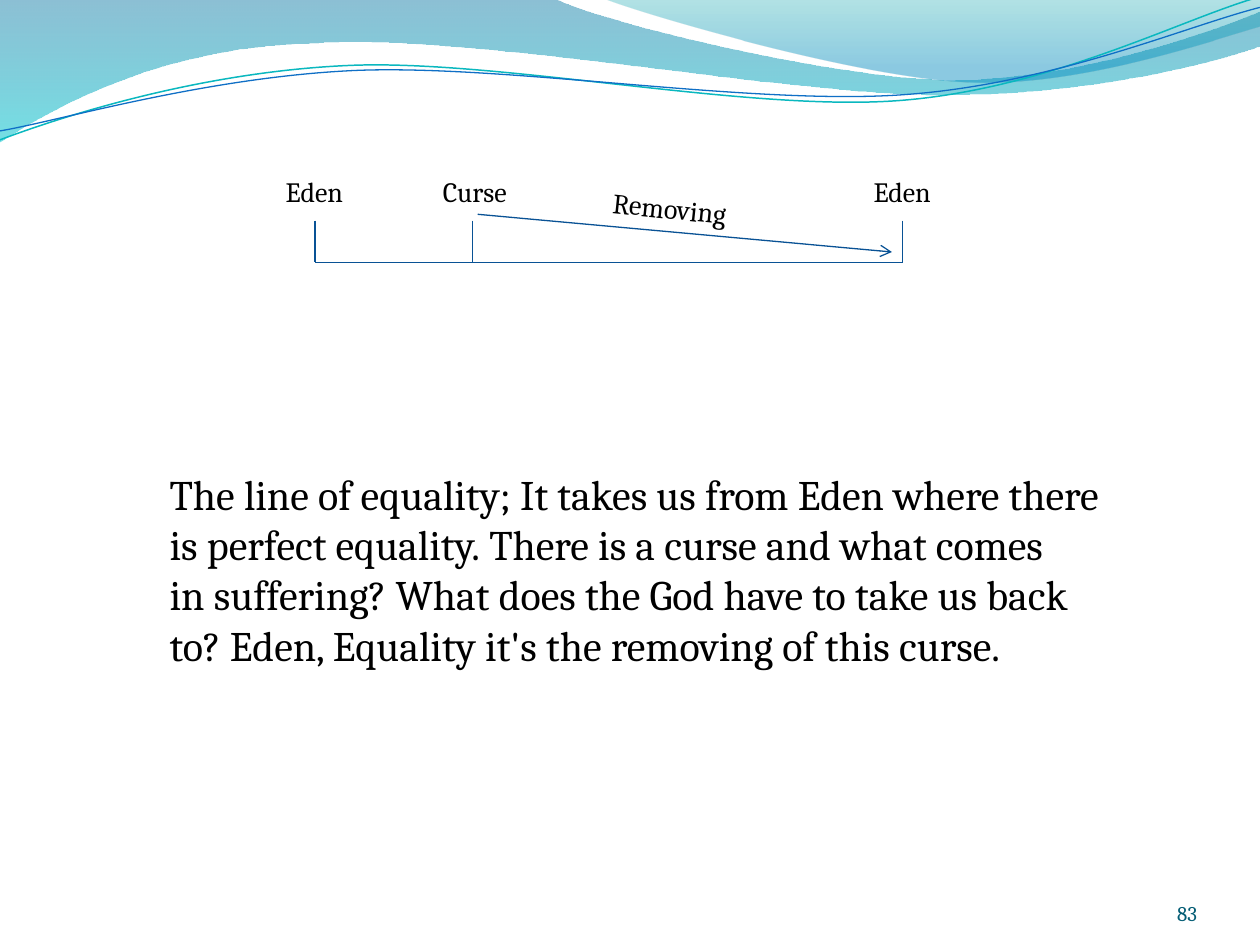
import pptx
import pptx.util
import pptx.dml.color
import pptx.enum.shapes
import pptx.enum.text
import pptx.oxml.ns
import lxml.etree

Cm = pptx.util.Cm
Pt = pptx.util.Pt
RGBColor = pptx.dml.color.RGBColor
Anchor = pptx.enum.text.MSO_ANCHOR
Align = pptx.enum.text.PP_ALIGN
AutoSize = pptx.enum.text.MSO_AUTO_SIZE
qn = pptx.oxml.ns.qn

BLACK = RGBColor(0x00, 0x00, 0x00)
DIAGRAM_BLUE = RGBColor(0x09, 0x52, 0x95)
NUMBER_BLUE = RGBColor(0x04, 0x5D, 0x75)
DEEP_BLUE = RGBColor(0x00, 0x74, 0xA1)
AQUA = RGBColor(0x00, 0xC6, 0xCF)
TEAL = RGBColor(0x00, 0xA1, 0xA9)
SKY = RGBColor(0x00, 0x8B, 0xBF)
CURVE_TEAL = RGBColor(0x0A, 0xB8, 0xBF)
CURVE_BLUE = RGBColor(0x0F, 0x6F, 0xC6)

NO_BREAK_SPACE = chr(160)

# Each outline is a start point, then lines (x, y) or Bézier curves (three points).
WIDE_WAVE = [
    (0, 0), (11.18, -0.03),
    (12.09, 0.43, 16.87, 1.6, 19.25, 1.6), (21.67, 1.6, 24.33, 0.66, 25.4, 0.23),
    (25.43, 0.91),
    (24.97, 1.12, 22.1, 1.93, 18.95, 1.91), (15.8, 1.91, 9.7, 0.71, 6.53, 0.86),
    (3.28, 0.91, 1.17, 2.11, -0.03, 2.87), (0, 0),
]
RIGHT_WAVE = [
    (12.17, -0.03),
    (12.93, 0.28, 17.32, 1.57, 19.53, 1.65), (21.74, 1.75, 24.41, 0.81, 25.4, 0.53),
    (25.4, 0), (12.17, -0.03),
]
TEAL_CURVE = [
    (0, 2.82),
    (1.22, 2.36, 4.01, 1.45, 7.04, 1.32), (10.03, 1.19, 15.06, 2.26, 18.11, 2.03),
    (21.16, 1.8, 23.83, 0.38, 25.35, -0.05),
]
BLUE_CURVE = [
    (0, 2.64),
    (1.19, 2.44, 4.17, 1.55, 7.19, 1.42), (10.24, 1.3, 15.16, 2.13, 18.21, 1.91),
    (21.23, 1.7, 23.9, 0.53, 25.4, 0.15),
]


def apply_format(target, values):
    for name, value in values.items():
        setattr(target, name, value)


class SlideBuilder:
    font_name = "Cambria"
    line_width = 0.75

    def __init__(self, slide):
        self.slide = slide

    def freeform(self, outline, close):
        """Build the outline from its end points, then bend the curved segments."""
        points = [(Cm(segment[-2]), Cm(segment[-1])) for segment in outline]
        builder = self.slide.shapes.build_freeform(*points[0])
        builder.add_line_segments(points[1:], close=close)
        shape = builder.convert_to_shape()
        shape.shadow.inherit = False
        sides = list(shape._element.iter(qn("a:lnTo")))
        for side, segment in zip(sides, outline[1:]):
            if len(segment) == 2:
                continue
            side.tag = qn("a:cubicBezTo")
            for index in (0, 1):
                x, y = segment[2 * index:2 * index + 2]
                control = lxml.etree.Element(qn("a:pt"))
                control.set("x", str(Cm(x) - shape.left))
                control.set("y", str(Cm(y) - shape.top))
                side.insert(index, control)
        return shape

    def wave(self, outline, stops):
        """Draw a filled wave; stops are (position, colour, opacity in percent)."""
        shape = self.freeform(outline, close=True)
        shape.line.fill.background()
        shape.fill.gradient()
        shape.fill.gradient_angle = 270
        for stop, (position, color, _) in zip(shape.fill.gradient_stops, stops):
            stop.position = position
            stop.color.rgb = color
        colors = shape._element.spPr.iter(qn("a:srgbClr"))
        for element, (_, _, opacity) in zip(colors, stops):
            alpha = lxml.etree.SubElement(element, qn("a:alpha"))
            alpha.set("val", str(opacity * 1000))

    def curve(self, outline, color, width):
        shape = self.freeform(outline, close=False)
        shape.fill.background()
        shape.line.color.rgb = color
        shape.line.width = Pt(width)

    def line(self, start, end, arrow=False):
        connector = self.slide.shapes.add_connector(
            pptx.enum.shapes.MSO_CONNECTOR.STRAIGHT,
            *(Cm(value) for value in start + end))
        connector.line.color.rgb = DIAGRAM_BLUE
        connector.line.width = Pt(self.line_width)
        if arrow:
            outline = connector.line._get_or_add_ln()
            lxml.etree.SubElement(outline, qn("a:tailEnd")).set("type", "arrow")
        lxml.etree.SubElement(connector._element.spPr, qn("a:effectLst"))

    def text(self, content, box, size=16, color=BLACK, rotation=0, align=None, **frame):
        """Add a text box; a tilde in the content stands for a no-break space."""
        shape = self.slide.shapes.add_textbox(*(Cm(value) for value in box))
        shape.rotation = rotation
        settings = {"word_wrap": True, "auto_size": AutoSize.SHAPE_TO_FIT_TEXT}
        apply_format(shape.text_frame, {**settings, **frame})
        paragraph = shape.text_frame.paragraphs[0]
        paragraph.alignment = align
        run = paragraph.add_run()
        run.text = content.replace("~", NO_BREAK_SPACE)
        apply_format(run.font, {"name": self.font_name, "size": Pt(size)})
        run.font.color.rgb = color


def main():
    presentation = pptx.Presentation()
    presentation.slide_width = Cm(25.4)
    presentation.slide_height = Cm(19.05)
    builder = SlideBuilder(presentation.slides.add_slide(presentation.slide_layouts[6]))

    builder.wave(WIDE_WAVE, [(0, DEEP_BLUE, 45), (1, AQUA, 55)])
    builder.wave(RIGHT_WAVE, [(0, TEAL, 30), (0.8, SKY, 45)])
    builder.curve(TEAL_CURVE, CURVE_TEAL, 0.85)
    builder.curve(BLUE_CURVE, CURVE_BLUE, 0.75)

    builder.text("83", (22.02, 17.65, 2.11, 1.02), size=12, color=NUMBER_BLUE,
                 align=Align.RIGHT, auto_size=AutoSize.NONE,
                 vertical_anchor=Anchor.BOTTOM, margin_left=0, margin_right=0,
                 margin_top=0, margin_bottom=0)

    tick_top, baseline = 4.45, 5.29
    stages = [("Eden", 6.35, 2.11, True), ("Curse", 9.52, 1.93, False),
              ("Eden", 18.2, 2.11, True)]
    builder.line((stages[0][1], baseline), (stages[-1][1], baseline))
    for label, x, width, wrap in stages:
        builder.line((x, tick_top), (x, baseline))
        builder.text(label, (x - 0.84, 3.39, width, 0.94), word_wrap=wrap)
    builder.line((9.63, 4.32), (17.98, 5.08), arrow=True)
    builder.text("Removing", (12.1, 3.78, 3.81, 0.94), rotation=6)

    builder.text(
        "The line of~equality;~It takes us from Eden~where there is perfect equality.~"
        "There is a curse and what comes in~suffering? What does the God have to take~"
        "us back to? Eden, Equality~it's~the removing of this curse.",
        (3.17, 9.31, 19.69, 6.15), size=24)

    presentation.save("out.pptx")


if __name__ == "__main__":
    main()
